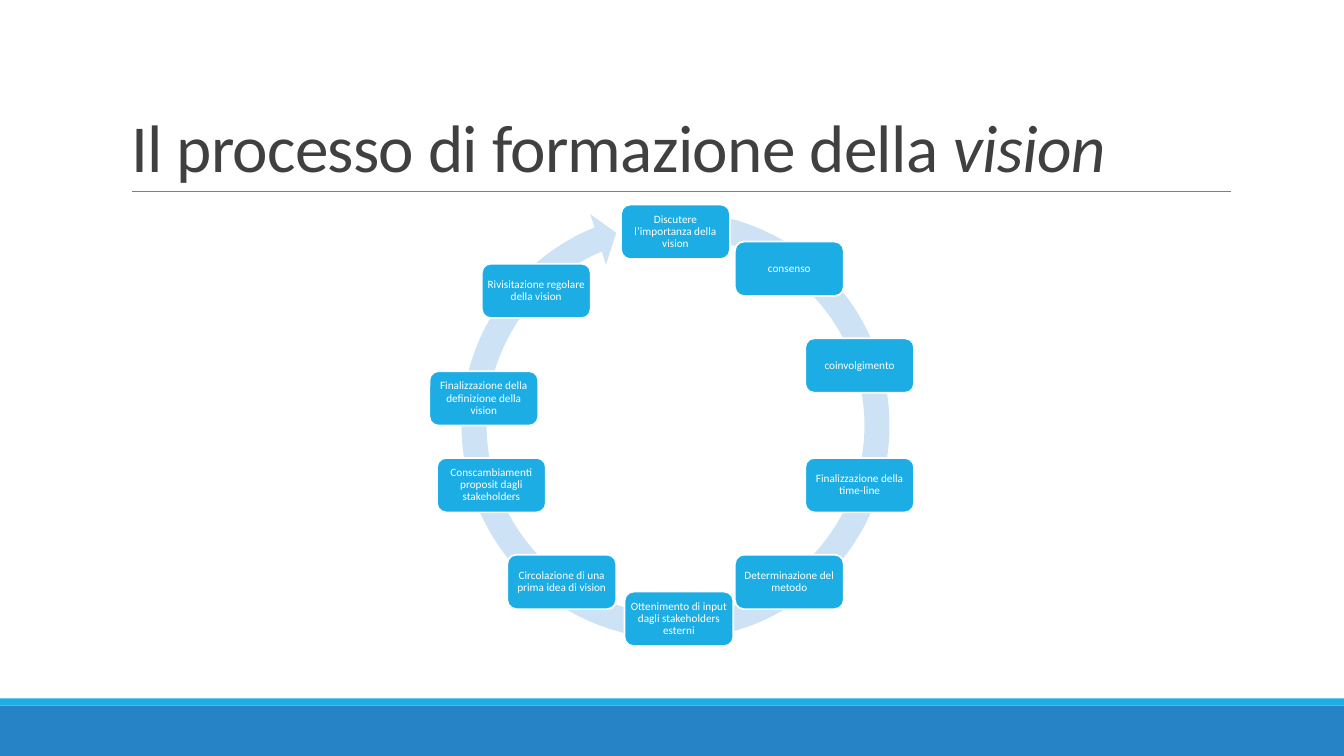
from math import cos, radians, sin

from lxml.etree import SubElement
from pptx import Presentation
from pptx.dml.color import RGBColor
from pptx.enum.shapes import MSO_CONNECTOR, MSO_SHAPE
from pptx.enum.text import MSO_ANCHOR, MSO_AUTO_SIZE, PP_ALIGN
from pptx.oxml.ns import qn
from pptx.util import Inches, Pt

COLORS = {
    "blue": "2683C6",
    "cyan": "1CADE4",
    "pale": "CDE3F5",
    "rule": "808080",
    "title": "404040",
    "white": "FFFFFF",
}
CENTER_X, CENTER_Y, RADIUS = 6.7, 4.22, 1.92
STEP_WIDTH, STEP_HEIGHT = 1.08, 0.54
STEPS = [
    (0, "Discutere l’importanza della vision"),
    (36, "consenso"),
    (72, "coinvolgimento"),
    (108, "Finalizzazione della time-line"),
    (144, "Determinazione del metodo"),
    (179, "Ottenimento di input dagli stakeholders esterni"),
    (216, "Circolazione di una prima idea di vision"),
    (252, "Conscambiamenti proposit dagli stakeholders"),
    (278, "Finalizzazione della definizione della vision"),
    (314, "Rivisitazione regolare della vision"),
]


def apply(target, values):
    for name, value in values.items():
        setattr(target, name, value)


class SlideBuilder:
    font_name = "Calibri"

    def __init__(self, slide):
        self.slide = slide

    def color(self, name):
        return RGBColor.from_string(COLORS[name])

    def frame(self, text_frame, inset, anchor):
        margins = {f"margin_{side}": Inches(inset) for side in ("left", "right", "top", "bottom")}
        apply(text_frame, {
            **margins,
            "word_wrap": True,
            "auto_size": MSO_AUTO_SIZE.NONE,
            "vertical_anchor": anchor,
        })

    def run(self, paragraph, text, size, color, italic=False):
        run = paragraph.add_run()
        run.text = text
        apply(run.font, {"name": self.font_name, "size": Pt(size), "italic": italic})
        run.font.color.rgb = self.color(color)
        return run

    def title(self, parts, left, top, width, height):
        title = self.slide.shapes.title
        apply(title, {
            "left": Inches(left),
            "top": Inches(top),
            "width": Inches(width),
            "height": Inches(height),
        })
        self.frame(title.text_frame, 0.1, MSO_ANCHOR.BOTTOM)
        title.text_frame.margin_bottom = Inches(0.05)
        paragraph = title.text_frame.paragraphs[0]
        apply(paragraph, {"alignment": PP_ALIGN.LEFT, "line_spacing": 0.85})
        for text, italic in parts:
            run = self.run(paragraph, text, 48, "title", italic)
            run.font._element.set("spc", "-50")

    def shape(self, kind, left, top, width, height, fill):
        shape = self.slide.shapes.add_shape(
            kind, Inches(left), Inches(top), Inches(width), Inches(height))
        shape.shadow.inherit = False
        shape.fill.solid()
        shape.fill.fore_color.rgb = self.color(fill)
        shape.line.fill.background()
        return shape

    def rule(self, left, right, top):
        line = self.slide.shapes.add_connector(
            MSO_CONNECTOR.STRAIGHT, Inches(left), Inches(top), Inches(right), Inches(top))
        line.line.color.rgb = self.color("rule")
        line.line.width = Pt(0.5)
        SubElement(line._element.spPr, qn("a:effectLst"))

    def cycle_arrow(self, size, thickness, head_angle, end_angle, start_angle, head_width):
        arrow = self.shape(MSO_SHAPE.CIRCULAR_ARROW, CENTER_X - size / 2,
                           CENTER_Y - size / 2, size, size, "pale")
        values = [thickness / 100, head_angle * 0.6, end_angle * 0.6,
                  start_angle * 0.6, head_width / 100]
        for index, value in enumerate(values):
            arrow.adjustments[index] = value

    def step(self, angle, text):
        left = CENTER_X + RADIUS * sin(radians(angle)) - STEP_WIDTH / 2
        top = CENTER_Y - RADIUS * cos(radians(angle)) - STEP_HEIGHT / 2
        box = self.shape(MSO_SHAPE.ROUNDED_RECTANGLE, left, top,
                         STEP_WIDTH, STEP_HEIGHT, "cyan")
        box.line.color.rgb = self.color("white")
        box.line.width = Pt(1.25)
        self.frame(box.text_frame, 0.03, MSO_ANCHOR.MIDDLE)
        paragraph = box.text_frame.paragraphs[0]
        apply(paragraph, {"alignment": PP_ALIGN.CENTER, "line_spacing": 0.9})
        self.run(paragraph, text, 8, "white")


def main():
    presentation = Presentation()
    apply(presentation, {"slide_width": Inches(13.33), "slide_height": Inches(7.5)})
    builder = SlideBuilder(presentation.slides.add_slide(presentation.slide_layouts[5]))
    builder.shape(MSO_SHAPE.RECTANGLE, 0, 7, 13.33, 0.5, "blue")
    builder.shape(MSO_SHAPE.RECTANGLE, 0, 6.93, 13.33, 0.07, "cyan")
    builder.rule(1.31, 12.21, 1.9)
    builder.title([("Il processo di formazione della ", False), ("vision", True)],
                  1.2, 0.31, 11, 1.59)
    builder.cycle_arrow(4.52, 5.5, 5.5, 247.4, 279.4, 5.8)
    for angle, text in STEPS:
        builder.step(angle, text)
    presentation.save("out.pptx")


if __name__ == "__main__":
    main()
